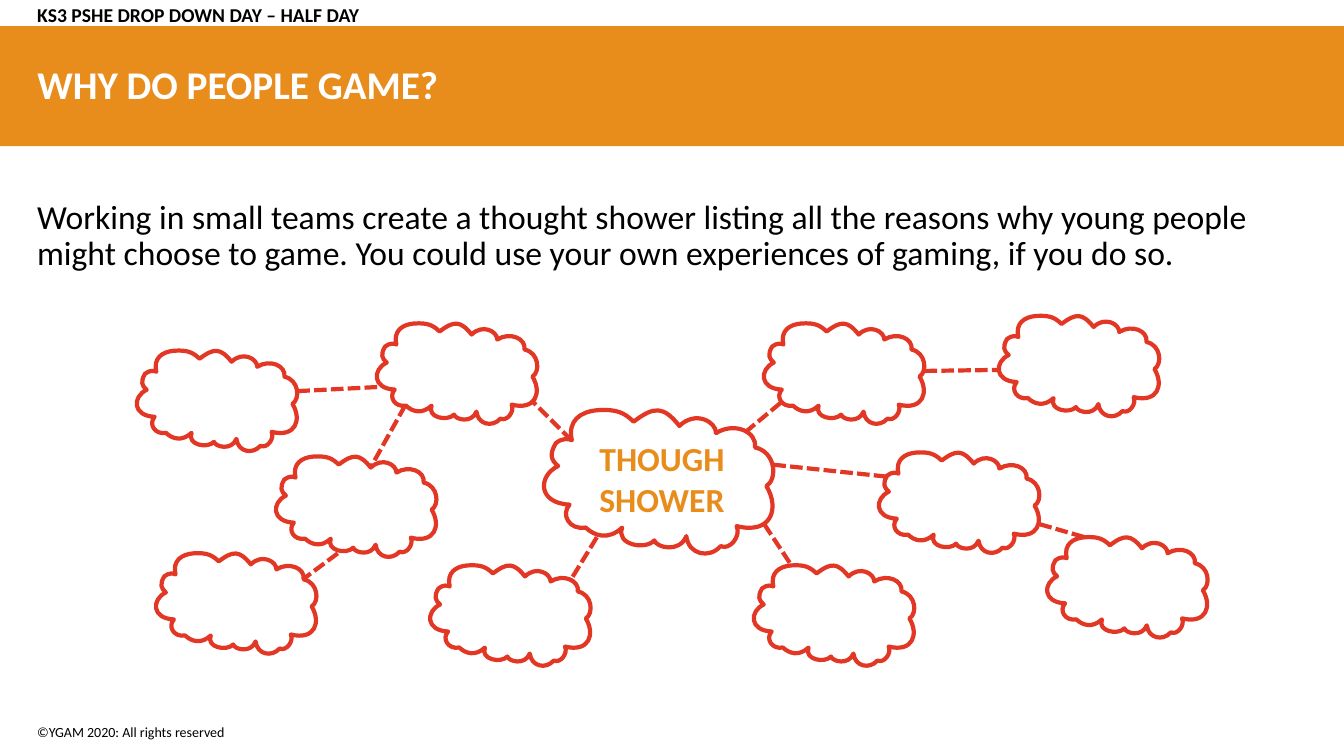
from dataclasses import dataclass
from typing import NamedTuple

from lxml.etree import SubElement
from pptx import Presentation
from pptx.dml.color import RGBColor
from pptx.enum.dml import MSO_LINE
from pptx.enum.shapes import MSO_CONNECTOR, MSO_SHAPE
from pptx.enum.text import MSO_ANCHOR, MSO_AUTO_SIZE, PP_ALIGN
from pptx.oxml.ns import qn
from pptx.shapes.autoshape import Shape
from pptx.slide import Slide
from pptx.text.text import TextFrame
from pptx.util import Emu, Inches, Pt


@dataclass(frozen=True)
class Theme:
    font: str = "Calibri"
    orange: RGBColor = RGBColor(0xE8, 0x8C, 0x1C)
    red: RGBColor = RGBColor(0xE3, 0x37, 0x25)
    black: RGBColor = RGBColor(0, 0, 0)
    white: RGBColor = RGBColor(0xFF, 0xFF, 0xFF)
    title_size: int = 28
    body_size: int = 24
    header_size: int = 14
    footer_size: int = 10
    outline: int = 3


class Area(NamedTuple):
    column: float
    row: float
    columns: float
    rows: float


class Cloud(NamedTuple):
    column: float
    row: float
    scale: float = 0.7


class Link(NamedTuple):
    start: tuple[float, float]
    end: tuple[float, float]


@dataclass(frozen=True)
class Label:
    area: Area
    lines: tuple[str, ...]
    size: int
    color: RGBColor
    bold: bool = False
    anchor: MSO_ANCHOR = MSO_ANCHOR.TOP
    align: PP_ALIGN = PP_ALIGN.LEFT
    spacing: float = 0.9


THEME = Theme()
WIDTH, HEIGHT = Inches(13.33), Inches(7.5)
GRID = 100
CLOUD_COLUMNS, CLOUD_ROWS = 17.03, 18.93

BANNER = Area(0, 3.47, 100, 15.87)
TITLE = Label(Area(2.03, 3.6, 95.72, 15.87), ("WHY DO PEOPLE GAME?",),
              THEME.title_size, THEME.white, True, MSO_ANCHOR.MIDDLE)
LABELS = [
    Label(Area(2.03, 95.07, 42.31, 3.6), ("©YGAM 2020: All rights reserved",),
          THEME.footer_size, THEME.black, spacing=1.0),
    Label(Area(2.03, 25.87, 91.9, 15.87),
          ("Working in small teams create a thought shower listing all the reasons "
           "why young people might choose to game. You could use your own experiences "
           "of gaming, if you do so.",),
          THEME.body_size, THEME.black),
    Label(Area(2.03, -0.8, 43.96, 5.87), ("KS3 PSHE DROP DOWN DAY – HALF DAY",),
          THEME.header_size, THEME.black, True, MSO_ANCHOR.MIDDLE),
    Label(Area(42.16, 57.33, 14.18, 12.13), ("THOUGH", "SHOWER"),
          THEME.body_size, THEME.orange, True, align=PP_ALIGN.CENTER, spacing=1.0),
]

CLOUDS = [
    Cloud(40.51, 54.27, 1), Cloud(56.86, 42.8), Cloud(65.42, 59.87),
    Cloud(56.11, 74.8), Cloud(74.34, 41.8), Cloud(77.94, 71.07),
    Cloud(28.06, 42.8), Cloud(32.03, 74.8), Cloud(20.56, 60.4),
    Cloud(10.2, 46.4), Cloud(11.63, 73.2),
]

LINKS = [
    Link((42.54, 58.27), (39.61, 53.07)), Link((44.41, 71.07), (42.39, 76.93)),
    Link((56.86, 69.33), (58.89, 74.8)), Link((55.44, 57.2), (58.14, 53.2)),
    Link((57.54, 61.47), (66.09, 63.07)), Link((68.79, 49.07), (74.34, 48.93)),
    Link((77.34, 69.33), (80.72, 71.07)), Link((30.16, 53.6), (27.61, 61.73)),
    Link((28.06, 51.2), (22.21, 51.73)), Link((25.13, 73.2), (22.51, 76.67)),
]

CLOUD_START = (12, 21)
CLOUD_CURVES = [
    ((10, 7), (16, 1), (23, 0)), ((32, -1), (35, 2), (39, 8)),
    ((48, -3), (52, -3), (59, 11)), ((66, 0), (75, 8), (75, 16)),
    ((83, 8), (93, 15), (92, 26)), ((101, 29), (102, 48), (97, 53)),
    ((103, 69), (99, 87), (84, 81)), ((86, 88), (81, 98), (77, 95)),
    ((72, 104), (63, 101), (62, 88)), ((59, 100), (49, 96), (48, 91)),
    ((44, 98), (31, 94), (34, 82)), ((28, 91), (22, 88), (18, 82)),
    ((11, 84), (7, 73), (11, 66)), ((-3, 65), (-3, 46), (6, 39)),
    ((3, 35), (2, 31), (5, 23)), ((8, 19), (11, 20), CLOUD_START),
]


def x(column: float) -> Emu:
    return Emu(round(WIDTH * column / GRID))


def y(row: float) -> Emu:
    return Emu(round(HEIGHT * row / GRID))


def place(area: Area) -> tuple[Emu, Emu, Emu, Emu]:
    return x(area.column), y(area.row), x(area.columns), y(area.rows)


def write(frame: TextFrame, label: Label) -> None:
    frame.word_wrap = True
    frame.auto_size = MSO_AUTO_SIZE.NONE
    frame.vertical_anchor = label.anchor
    paragraph = frame.paragraphs[0]
    paragraph.alignment = label.align
    paragraph.line_spacing = label.spacing
    for number, line in enumerate(label.lines):
        if number:
            paragraph.add_line_break()
        run = paragraph.add_run()
        run.text = line
        run.font.name = THEME.font
        run.font.size = Pt(label.size)
        run.font.bold = label.bold
        run.font.color.rgb = label.color


def draw_banner(slide: Slide) -> None:
    banner = slide.shapes.add_shape(MSO_SHAPE.RECTANGLE, *place(BANNER))
    banner.shadow.inherit = False
    banner.fill.solid()
    banner.fill.fore_color.rgb = THEME.orange
    banner.line.fill.background()
    slide.shapes.element.insert(2, banner.element)


def draw_title(slide: Slide) -> None:
    title = slide.shapes.title
    title.left, title.top, title.width, title.height = place(TITLE.area)
    write(title.text_frame, TITLE)


def curve_outline(bubble: Shape) -> None:
    outline = bubble.element.find(".//" + qn("a:path"))
    outline.clear()
    outline.set("w", str(GRID))
    outline.set("h", str(GRID))
    steps = [("a:moveTo", (CLOUD_START,))]
    steps += [("a:cubicBezTo", curve) for curve in CLOUD_CURVES]
    for tag, points in steps:
        step = SubElement(outline, qn(tag))
        for across, down in points:
            SubElement(step, qn("a:pt"), x=str(across), y=str(down))
    SubElement(outline, qn("a:close"))


def draw_cloud(slide: Slide, cloud: Cloud) -> None:
    area = Area(cloud.column, cloud.row,
                CLOUD_COLUMNS * cloud.scale, CLOUD_ROWS * cloud.scale)
    builder = slide.shapes.build_freeform(*CLOUD_START)
    builder.add_line_segments([end for _, _, end in CLOUD_CURVES])
    bubble = builder.convert_to_shape()
    curve_outline(bubble)
    bubble.left, bubble.top, bubble.width, bubble.height = place(area)
    bubble.shadow.inherit = False
    bubble.fill.background()
    bubble.line.color.rgb = THEME.red
    bubble.line.width = Pt(THEME.outline)


def draw_link(slide: Slide, link: Link) -> None:
    (start_column, start_row), (end_column, end_row) = link
    branch = slide.shapes.add_connector(
        MSO_CONNECTOR.STRAIGHT, x(start_column), y(start_row), x(end_column), y(end_row))
    branch.line.color.rgb = THEME.red
    branch.line.width = Pt(THEME.outline)
    branch.line.dash_style = MSO_LINE.SQUARE_DOT
    SubElement(branch.element.spPr, qn("a:effectLst"))


def main() -> None:
    presentation = Presentation()
    presentation.slide_width, presentation.slide_height = WIDTH, HEIGHT
    slide = presentation.slides.add_slide(presentation.slide_layouts[5])
    draw_banner(slide)
    draw_title(slide)
    for cloud in CLOUDS:
        draw_cloud(slide, cloud)
    for link in LINKS:
        draw_link(slide, link)
    for label in LABELS:
        write(slide.shapes.add_textbox(*place(label.area)).text_frame, label)
    presentation.save("out.pptx")


if __name__ == "__main__":
    main()
